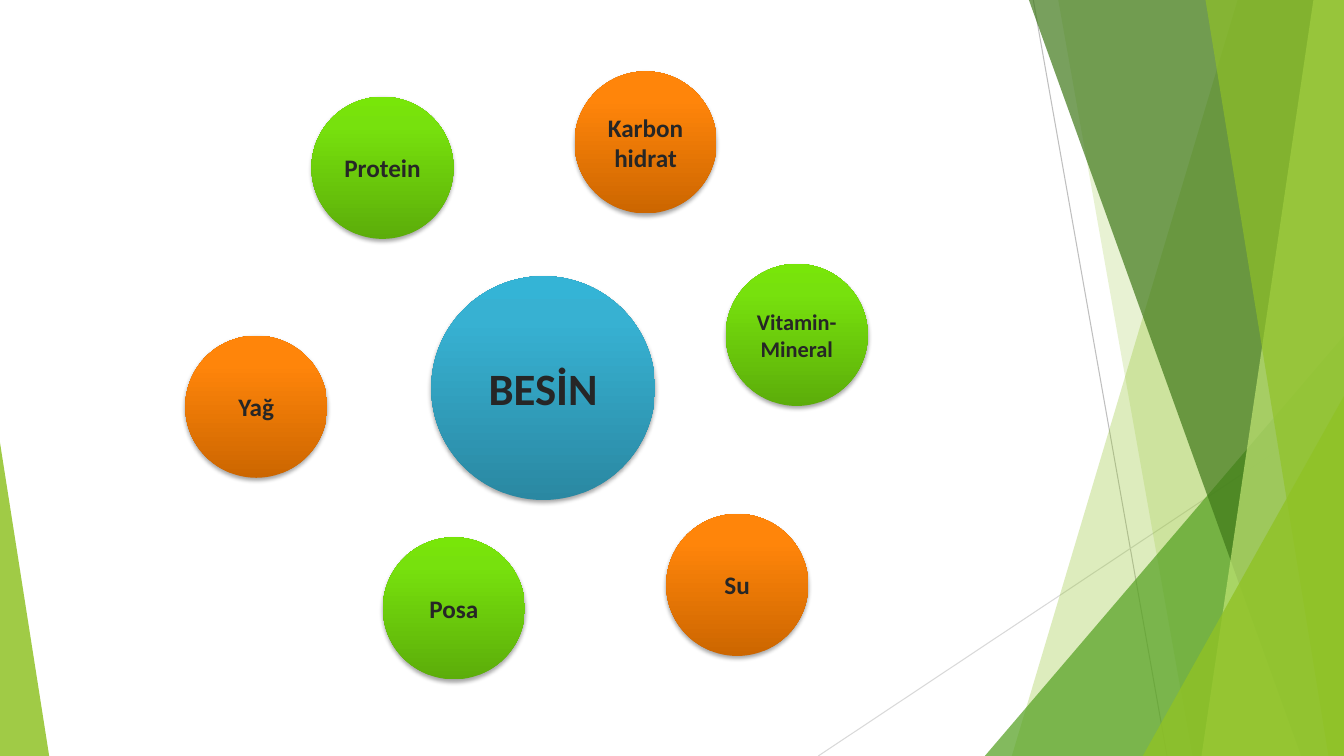
from lxml import etree
from pptx import Presentation
from pptx.dml.color import RGBColor
from pptx.enum.shapes import MSO_CONNECTOR, MSO_SHAPE
from pptx.enum.text import MSO_ANCHOR, PP_ALIGN
from pptx.oxml.ns import qn
from pptx.util import Cm, Pt

WIDTH, HEIGHT = 33.87, 19.05

LIME = RGBColor(0x90, 0xC2, 0x26)
PALE_LIME = RGBColor(0xC0, 0xE4, 0x74)
GREEN = RGBColor(0x54, 0xA0, 0x21)
DARK_GREEN = RGBColor(0x3F, 0x78, 0x19)
GREY = RGBColor(0xBF, 0xBF, 0xBF)
LIGHT_GREY = RGBColor(0xD9, 0xD9, 0xD9)
INK = RGBColor(0x26, 0x26, 0x26)
BLACK = RGBColor(0, 0, 0)

# Gradients run from the bottom up, with stops at 0, 80 and 100 %
STOPS = (0, 80, 100)
GREEN_BLEND = (RGBColor(0x5C, 0xAD, 0x0A), RGBColor(0x77, 0xE1, 0x0D), RGBColor(0x78, 0xE6, 0x09))
ORANGE_BLEND = (RGBColor(0xCC, 0x66, 0x00), RGBColor(0xFF, 0x85, 0x0A), RGBColor(0xFF, 0x85, 0x0C))
BLUE_BLEND = (RGBColor(0x2A, 0x88, 0xA2), RGBColor(0x37, 0xB1, 0xD2), RGBColor(0x34, 0xB4, 0xD6))

# Circles: text, left, top, diameter, text size, gradient
NUTRIENT, FOOD = 3.58, 5.64
CIRCLES = [
    ("Protein", 7.85, 2.44, NUTRIENT, 18, GREEN_BLEND),
    ("Posa", 9.65, 13.54, NUTRIENT, 18, GREEN_BLEND),
    ("Su", 16.79, 12.95, NUTRIENT, 18, ORANGE_BLEND),
    ("Vitamin-Mineral", 18.29, 6.65, NUTRIENT, 16, GREEN_BLEND),
    ("Karbonhidrat", 14.48, 1.8, NUTRIENT, 18, ORANGE_BLEND),
    ("Yağ", 4.67, 8.46, NUTRIENT, 18, ORANGE_BLEND),
    ("BESİN", 10.87, 6.96, FOOD, 32, BLUE_BLEND),
]

# Thin lines: x1, y1, x2, y2, colour
RAYS = [
    (26.04, 0, 29.41, HEIGHT, GREY),
    (WIDTH, 10.24, 20.62, HEIGHT, LIGHT_GREY),
]

# Facets, back to front. A band reaches the right edge: top x, bottom x.
# A wedge stands on the bottom edge: left, top, width, apex (0 left, 1 right).
FACETS = [
    ("band", (31.19, 25.5), LIME, 30),
    ("band", (26.67, 30.05), LIME, 20),
    ("wedge", (24.82, 8.46, 9.05, 1), GREEN, 72),
    ("band", (25.93, 32.79), DARK_GREEN, 70),
    ("band", (33.1, 30.28), PALE_LIME, 70),
    ("band", (30.38, 33.48), LIME, 65),
    ("wedge", (28.8, 9.98, 5.07, 1), LIME, 80),
    ("wedge", (0, 11.15, 1.24, 0), LIME, 85),
]


def add_color(parent, color, alpha=None):
    """Append a colour element, with opacity in percent if given."""
    node = etree.SubElement(parent, qn("a:srgbClr"), val=str(color))
    if alpha is not None:
        etree.SubElement(node, qn("a:alpha"), val=str(alpha * 1000))


def add_band(shapes, top_x, bottom_x):
    outline = shapes.build_freeform(Cm(top_x), 0)
    corners = [(WIDTH, 0), (WIDTH, HEIGHT), (bottom_x, HEIGHT)]
    outline.add_line_segments([(Cm(x), Cm(y)) for x, y in corners], close=True)
    return outline.convert_to_shape()


def add_wedge(shapes, left, top, width, apex):
    wedge = shapes.add_shape(MSO_SHAPE.ISOSCELES_TRIANGLE, Cm(left), Cm(top),
                             Cm(width), Cm(HEIGHT - top))
    wedge.adjustments[0] = apex
    return wedge


def add_facet(shapes, kind, geometry, color, alpha):
    facet = (add_band if kind == "band" else add_wedge)(shapes, *geometry)
    facet.shadow.inherit = False
    facet.line.fill.background()
    facet.fill.solid()
    facet.fill.fore_color.rgb = color
    tint = facet._element.spPr.find(qn("a:solidFill"))[0]
    etree.SubElement(tint, qn("a:alpha"), val=str(alpha * 1000))


def add_ray(shapes, x1, y1, x2, y2, color):
    ray = shapes.add_connector(MSO_CONNECTOR.STRAIGHT, Cm(x1), Cm(y1), Cm(x2), Cm(y2))
    ray.line.color.rgb = color
    ray.line.width = Pt(0.75)
    etree.SubElement(ray._element.spPr, qn("a:effectLst"))


def add_circle(shapes, text, left, top, diameter, size, blend):
    circle = shapes.add_shape(MSO_SHAPE.OVAL, Cm(left), Cm(top), Cm(diameter), Cm(diameter))
    circle.line.fill.background()
    properties = circle._element.spPr

    # Three-stop gradient
    circle.fill.gradient()
    circle.fill.gradient_angle = 90
    stops = properties.find(qn("a:gradFill")).find(qn("a:gsLst"))
    for stop in list(stops):
        stops.remove(stop)
    for position, color in zip(STOPS, blend):
        add_color(etree.SubElement(stops, qn("a:gs"), pos=str(position * 1000)), color)

    # Soft shadow straight below
    circle.shadow.inherit = False
    shadow = etree.SubElement(properties.find(qn("a:effectLst")), qn("a:outerShdw"),
                              blurRad=str(Pt(3.1)), dist=str(Pt(1.8)),
                              dir="5400000", rotWithShape="0")
    add_color(shadow, BLACK, 35)

    # Label
    frame = circle.text_frame
    frame.word_wrap = True
    frame.vertical_anchor = MSO_ANCHOR.MIDDLE
    paragraph = frame.paragraphs[0]
    paragraph.alignment = PP_ALIGN.CENTER
    label = paragraph.add_run()
    label.text = text
    label.font.name = "Calibri"
    label.font.size = Pt(size)
    label.font.bold = True
    label.font.color.rgb = INK


def main():
    deck = Presentation()
    deck.slide_width, deck.slide_height = Cm(WIDTH), Cm(HEIGHT)
    shapes = deck.slides.add_slide(deck.slide_layouts[6]).shapes

    # Backdrop
    for ray in RAYS:
        add_ray(shapes, *ray)
    for facet in FACETS:
        add_facet(shapes, *facet)

    # Food and its nutrients
    for circle in CIRCLES:
        add_circle(shapes, *circle)

    deck.save("out.pptx")


if __name__ == "__main__":
    main()
